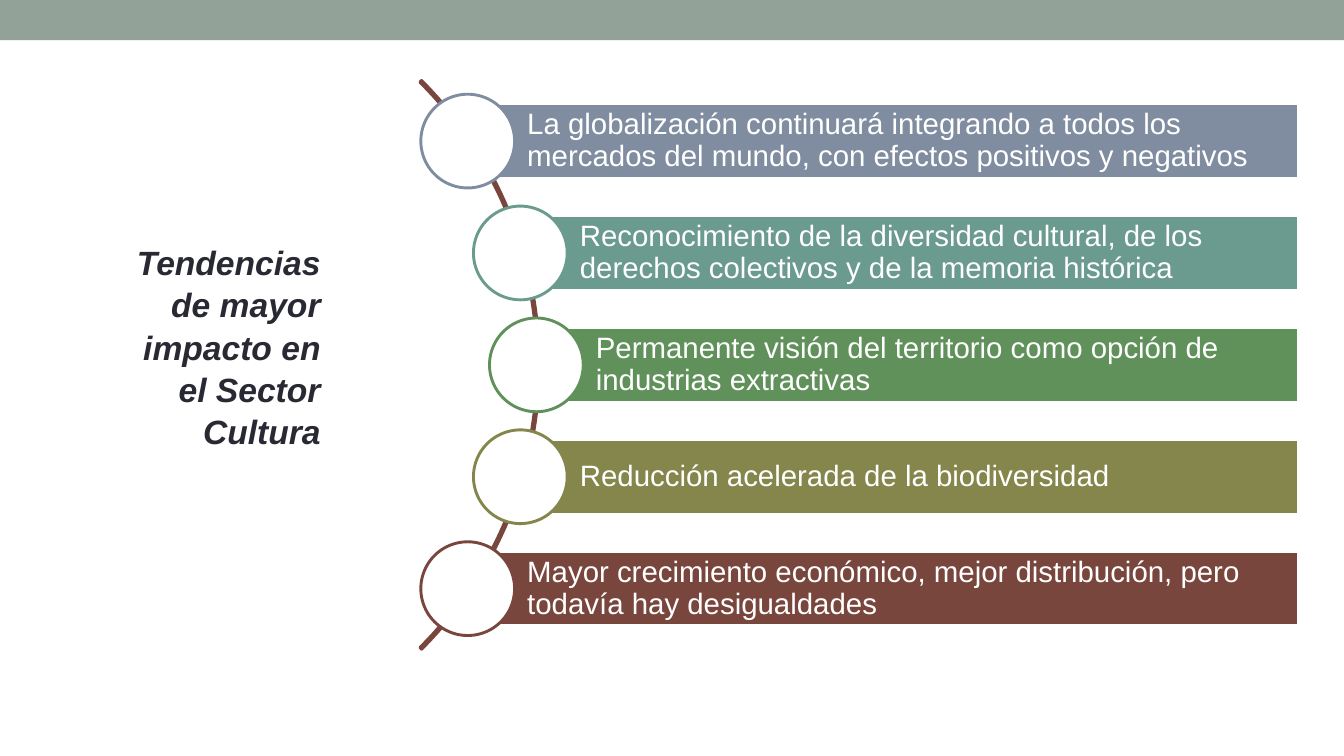
from dataclasses import dataclass
from math import sqrt

from pptx import Presentation
from pptx.dml.color import RGBColor
from pptx.enum.shapes import MSO_SHAPE
from pptx.enum.text import MSO_ANCHOR, MSO_AUTO_SIZE, PP_ALIGN
from pptx.util import Inches, Pt


@dataclass(frozen=True)
class Theme:
    font: str = "Arial"
    title_size: int = 24
    trend_size: int = 21
    outline: float = 2.08
    white: str = "FFFFFF"
    ink: str = "292934"
    band: str = "93A299"
    arc: str = "79463D"


def set_all(target, values):
    for name, value in values.items():
        setattr(target, name, value)


class TrendSlide:
    def __init__(self, deck, theme):
        self.theme = theme
        self.slide = deck.slides.add_slide(deck.slide_layouts[5])

    def figure(self, preset, box, fill=None, line=None):
        figure = self.slide.shapes.add_shape(preset, *map(Inches, box))
        figure.shadow.inherit = False
        if fill:
            figure.fill.solid()
            figure.fill.fore_color.rgb = RGBColor.from_string(fill)
        else:
            figure.fill.background()
        if line:
            figure.line.color.rgb = RGBColor.from_string(line)
            figure.line.width = Pt(self.theme.outline)
        else:
            figure.line.fill.background()
        return figure

    def label(self, holder, text, frame_format, paragraph_format, font_format, color):
        frame = holder.text_frame
        frame.text = text
        paragraph = frame.paragraphs[0]
        font = paragraph.runs[0].font
        set_all(frame, {"word_wrap": True, "auto_size": MSO_AUTO_SIZE.NONE, **frame_format})
        set_all(paragraph, paragraph_format)
        set_all(font, {"name": self.theme.font, **font_format})
        font.color.rgb = RGBColor.from_string(color)

    def title(self, text, box):
        heading = self.slide.shapes.title
        set_all(heading, dict(zip(("left", "top", "width", "height"), map(Inches, box))))
        self.label(
            heading, text,
            {"vertical_anchor": MSO_ANCHOR.TOP},
            {"alignment": PP_ALIGN.RIGHT, "line_spacing": 1.05},
            {"size": Pt(self.theme.title_size), "bold": True, "italic": True},
            self.theme.ink,
        )

    def arc(self, center_x, center_y, radius):
        box = (center_x - radius, center_y - radius, 2 * radius, 2 * radius)
        curve = self.figure(MSO_SHAPE.BLOCK_ARC, box, line=self.theme.arc)
        for index, value in enumerate((189, 27, 0.003)):
            curve.adjustments[index] = value

    def trend(self, text, color, left, middle, right, height=0.74, diameter=0.93):
        bar = self.figure(
            MSO_SHAPE.RECTANGLE, (left, middle - height / 2, right - left, height),
            color, self.theme.white,
        )
        inset = Inches(0.06)
        self.label(
            bar, text,
            {"vertical_anchor": MSO_ANCHOR.MIDDLE, "margin_left": Inches(0.59),
             "margin_right": inset, "margin_top": inset, "margin_bottom": inset},
            {"alignment": PP_ALIGN.LEFT, "line_spacing": 0.9},
            {"size": Pt(self.theme.trend_size)},
            self.theme.white,
        )
        corner = (left - diameter / 2, middle - diameter / 2)
        self.figure(MSO_SHAPE.OVAL, (*corner, diameter, diameter), self.theme.white, color)


TRENDS = (
    ("La globalización continuará integrando a todos los mercados del mundo, "
     "con efectos positivos y negativos", "808DA0"),
    ("Reconocimiento de la diversidad cultural, de los derechos colectivos "
     "y de la memoria histórica", "6B9A8E"),
    ("Permanente visión del territorio como opción de industrias extractivas", "61915A"),
    ("Reducción acelerada de la biodiversidad", "85864B"),
    ("Mayor crecimiento económico, mejor distribución, pero todavía hay desigualdades",
     "79463D"),
)
CENTER_X, CENTER_Y = 1.36, 3.62
ARC_RADIUS, BULLET_RADIUS = 3.99, 3.96
PITCH, BAR_RIGHT = 1.11, 12.88


def main():
    deck = Presentation()
    deck.slide_width, deck.slide_height = Inches(13.33), Inches(7.5)
    theme = Theme()
    page = TrendSlide(deck, theme)
    page.figure(MSO_SHAPE.RECTANGLE, (0, 0, 13.33, 0.4), theme.band)
    page.arc(CENTER_X, CENTER_Y, ARC_RADIUS)
    for index, (text, color) in enumerate(TRENDS):
        offset = (index - len(TRENDS) // 2) * PITCH
        left = CENTER_X + sqrt(BULLET_RADIUS ** 2 - offset ** 2)
        page.trend(text, color, left, CENTER_Y + offset, BAR_RIGHT)
    page.title("Tendencias de mayor impacto en el Sector Cultura", (1.15, 2.33, 2.13, 2.12))
    deck.save("out.pptx")


if __name__ == "__main__":
    main()
